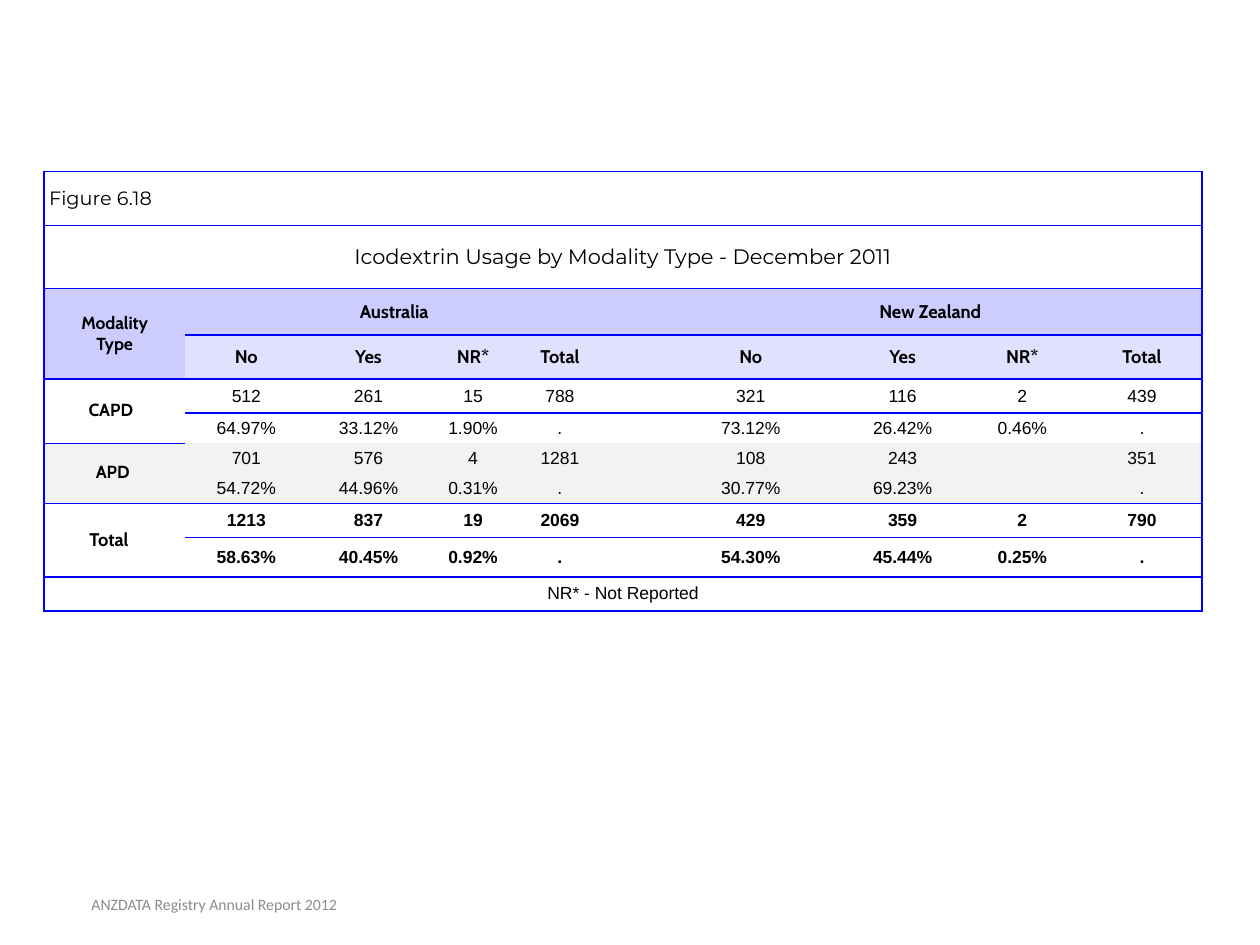
from lxml.etree import SubElement
from pptx import Presentation
from pptx.dml.color import RGBColor
from pptx.enum.text import MSO_ANCHOR, PP_ALIGN
from pptx.oxml.ns import qn
from pptx.util import Inches, Pt

FIGURE = "Figure 6.18"
TITLE = "Icodextrin Usage by Modality Type - December 2011"
FOOTNOTE = "NR* - Not Reported"
FOOTER = "ANZDATA Registry Annual Report 2012"
COUNTRIES = ["Modality\nType", "Australia", "", "", "", "", "New Zealand", "", "", ""]
ANSWERS = ["No", "Yes", "NR*", "Total"]
USAGE = [
    ["CAPD", "512", "261", "15", "788", "", "321", "116", "2", "439"],
    ["", "64.97%", "33.12%", "1.90%", ".", "", "73.12%", "26.42%", "0.46%", "."],
    ["APD", "701", "576", "4", "1281", "", "108", "243", "", "351"],
    ["", "54.72%", "44.96%", "0.31%", ".", "", "30.77%", "69.23%", "", "."],
    ["Total", "1213", "837", "19", "2069", "", "429", "359", "2", "790"],
    ["", "58.63%", "40.45%", "0.92%", ".", "", "54.30%", "45.44%", "0.25%", "."],
]
COLUMN_WIDTHS = [1.12, 0.97, 0.97, 0.69, 0.69, 0.44, 1.46, 0.95, 0.95, 0.95]
ROW_HEIGHTS = [0.43, 0.5, 0.37, 0.35, 0.27, 0.24, 0.24, 0.24, 0.27, 0.31, 0.27]
LAST_ROW, LAST_COLUMN = len(ROW_HEIGHTS) - 1, len(COLUMN_WIDTHS) - 1
MERGES = [((row, 0), (row, LAST_COLUMN)) for row in (0, 1, LAST_ROW)]
MERGES += [((row, 0), (row + 1, 0)) for row in (2, 4, 6, 8)]
MERGES += [((2, column), (2, column + 3)) for column in (1, 6)]
LABEL_SHIFTS = {4: 0.06, 6: 0.03, 8: 0.09}
RULE_WIDTHS = {-1: 1, 0: 1, 1: 1, 2: 1, 3: 1, 5: 1, 7: 0.75, 9: 1, 10: 1}
THEME = {
    "rule": "0000FF", "text": "000000", "footer": "8C8C8C",
    "fills": {2: "CCCCFF", 3: "E1E1FF", 6: "F2F2F2", 7: "F2F2F2"},
    "no_grid": "{2D5ABB26-0587-4C30-8999-92F81FD0307C}",
    "figure": ("Montserrat", 11, False), "title": ("Montserrat", 12, False),
    "heading": ("Cabin", 10.5, True), "label": ("Cabin", 10, True),
    "value": ("Arial", 10, False), "total": ("Arial", 10, True),
    "source": ("Calibri", 9, False),
}


def style_text(frame, style, color, align):
    """Format every paragraph and run of a text frame."""
    name, size, bold = THEME[style]
    for paragraph in frame.paragraphs:
        paragraph.alignment = align
        for run in paragraph.runs:
            run.font.name, run.font.size, run.font.bold = name, Pt(size), bold
            run.font.color.rgb = RGBColor.from_string(color)
        if not paragraph.runs:
            SubElement(paragraph._p, qn("a:endParaRPr"), sz=str(int(size * 100)))


def cell_style(row, column):
    """Choose the type style for a table position."""
    if row < 2:
        return ("figure", "title")[row]
    if column == 0 and row in (2, 4, 6):
        return "label"
    if row in (2, 3) or (row, column) == (8, 0):
        return "heading"
    return "total" if row in (8, 9) else "value"


def rule_width(row, column):
    """Give the width of the rule below a row, or zero where there is none."""
    if (row == 2 and column == 0) or (row == 5 and column > 0):
        return 0
    return RULE_WIDTHS.get(row, 0)


def draw_borders(cell, row, column):
    """Rule the sides of a cell, allowing for its span."""
    height = cell.span_height if cell.is_merge_origin else 1
    width = cell.span_width if cell.is_merge_origin else 1
    sides = {
        "L": column == 0,
        "R": column + width - 1 == LAST_COLUMN,
        "T": rule_width(row - 1, column),
        "B": rule_width(row + height - 1, column),
    }
    for side, points in sides.items():
        if points:
            line = SubElement(cell._tc.get_or_add_tcPr(), qn(f"a:ln{side}"), w=str(int(Pt(points))))
            SubElement(SubElement(line, qn("a:solidFill")), qn("a:srgbClr"), val=THEME["rule"])


def fill_cell(cell, row, column, text):
    """Write and format one table cell."""
    cell.text_frame.text = text
    align = PP_ALIGN.LEFT if row == 0 else PP_ALIGN.CENTER
    style_text(cell.text_frame, cell_style(row, column), THEME["text"], align)
    cell.vertical_anchor = MSO_ANCHOR.MIDDLE
    cell.margin_left = cell.margin_right = Inches(0.04)
    cell.margin_top = cell.margin_bottom = Inches(0.04 if row < 2 else 0.02)
    if column == 0 and row in LABEL_SHIFTS:
        cell.margin_right = Inches(0.04 + LABEL_SHIFTS[row])
        if row < 8:
            cell.text_frame.paragraphs[0].line_spacing = 0.75
    draw_borders(cell, row, column)
    color = THEME["fills"].get(row)
    if color:
        cell.fill.solid()
        cell.fill.fore_color.rgb = RGBColor.from_string(color)
    else:
        cell.fill.background()


def add_usage_table(slide):
    """Build the icodextrin usage table."""
    blanks = [""] * LAST_COLUMN
    content = [[FIGURE] + blanks, [TITLE] + blanks, COUNTRIES,
               [""] + ANSWERS + [""] + ANSWERS, *USAGE, [FOOTNOTE] + blanks]
    usage = slide.shapes.add_table(
        len(ROW_HEIGHTS), len(COLUMN_WIDTHS), Inches(0.35), Inches(1.36),
        Inches(sum(COLUMN_WIDTHS)), Inches(sum(ROW_HEIGHTS))).table
    usage.first_row = usage.horz_banding = False
    usage._tbl.tblPr.find(qn("a:tableStyleId")).text = THEME["no_grid"]
    for column, width in zip(usage.columns, COLUMN_WIDTHS):
        column.width = Inches(width)
    for row, height in zip(usage.rows, ROW_HEIGHTS):
        row.height = Inches(height)
    for first, last in MERGES:
        usage.cell(*first).merge(usage.cell(*last))
    for row, texts in enumerate(content):
        for column, text in enumerate(texts):
            fill_cell(usage.cell(row, column), row, column, text)


def add_footer(slide):
    """Add the report name at the foot of the slide."""
    footer = slide.shapes.add_textbox(Inches(0.2), Inches(6.98), Inches(3), Inches(0.4)).text_frame
    footer.word_wrap = True
    footer.vertical_anchor = MSO_ANCHOR.MIDDLE
    footer.text = FOOTER
    style_text(footer, "source", THEME["footer"], PP_ALIGN.CENTER)


def main():
    """Build and save the slide."""
    deck = Presentation()
    deck.slide_width, deck.slide_height = Inches(10), Inches(7.5)
    slide = deck.slides.add_slide(deck.slide_layouts[6])
    add_usage_table(slide)
    add_footer(slide)
    deck.save("out.pptx")


if __name__ == "__main__":
    main()
